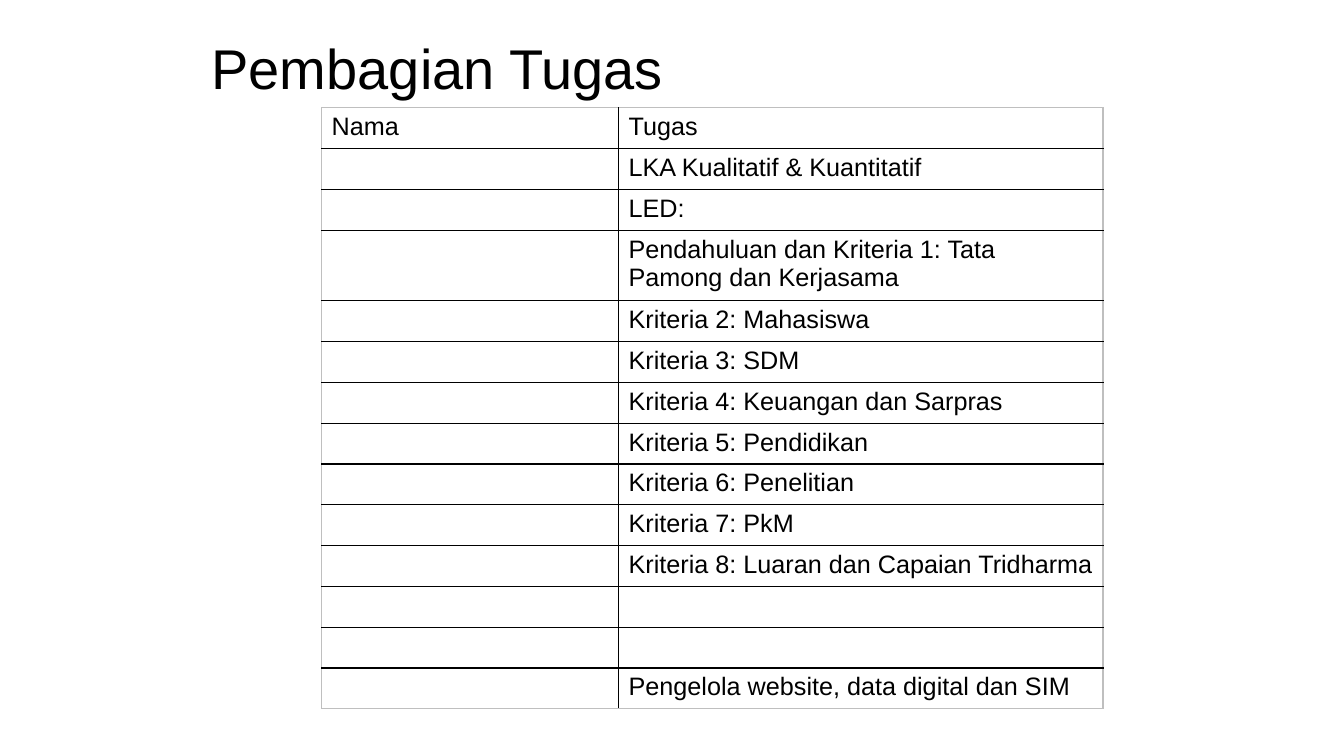
import pptx
import pptx.dml.color
import pptx.enum.text
import pptx.oxml.ns
import pptx.util
from lxml import etree

SLIDE_WIDTH, SLIDE_HEIGHT = 13.33, 7.5
INK, FRAME = "000000", "BFBFBF"
TITLE_FORMAT = {"name": "Arial", "size": pptx.util.Pt(40)}
CELL_FORMAT = {"name": "Arial", "size": pptx.util.Pt(18)}
HEADER = ("Nama", "Tugas")
DUTIES = [
    "LKA Kualitatif & Kuantitatif",
    "LED:",
    "Pendahuluan dan Kriteria 1: Tata Pamong dan Kerjasama",
    "Kriteria 2: Mahasiswa",
    "Kriteria 3: SDM",
    "Kriteria 4: Keuangan dan Sarpras",
    "Kriteria 5: Pendidikan",
    "Kriteria 6: Penelitian",
    "Kriteria 7: PkM",
    "Kriteria 8: Luaran dan Capaian Tridharma",
    "",
    "",
    "Pengelola website, data digital dan SIM",
]


def color(value):
    return pptx.dml.color.RGBColor.from_string(value)


def style_font(font, font_format):
    for attribute, value in font_format.items():
        setattr(font, attribute, value)
    font.color.rgb = color(INK)


def draw_borders(cell, edges):
    """Add 1 pt lines to a cell; edges maps a:ln tags to hex colours, in L, R, T, B order."""
    properties = cell._tc.get_or_add_tcPr()
    for position, (tag, value) in enumerate(edges.items()):
        line = etree.Element(pptx.oxml.ns.qn(f"a:{tag}"), w=str(pptx.util.Pt(1)))
        fill = etree.SubElement(line, pptx.oxml.ns.qn("a:solidFill"))
        etree.SubElement(fill, pptx.oxml.ns.qn("a:srgbClr"), val=value)
        properties.insert(position, line)


def add_title(slide, box, text):
    frame = slide.shapes.add_textbox(*map(pptx.util.Inches, box)).text_frame
    frame.word_wrap = True
    frame.vertical_anchor = pptx.enum.text.MSO_ANCHOR.MIDDLE
    heading = frame.paragraphs[0]
    heading.text = text
    heading.line_spacing = 0.9
    style_font(heading.runs[0].font, TITLE_FORMAT)


def add_duty_table(slide, box, rows, name_share):
    """Place the table in the box with equal rows; long duties wrap and grow their row."""
    left, top, width, height = map(pptx.util.Inches, box)
    table = slide.shapes.add_table(len(rows), len(HEADER), left, top, width, height).table
    table.first_row = table.horz_banding = False
    table.columns[0].width = int(width * name_share)
    table.columns[1].width = width - table.columns[0].width
    last_row, last_column = len(rows) - 1, len(HEADER) - 1
    for r, row in enumerate(rows):
        for c, text in enumerate(row):
            cell = table.cell(r, c)
            cell.fill.background()
            entry = cell.text_frame.paragraphs[0]
            entry.text = text
            style_font(entry.font, CELL_FORMAT)
            for run in entry.runs:
                style_font(run.font, CELL_FORMAT)
            draw_borders(cell, {
                "lnL": FRAME if c == 0 else INK,
                "lnR": FRAME if c == last_column else INK,
                "lnT": FRAME if r == 0 else INK,
                "lnB": FRAME if r == last_row else INK,
            })


def main():
    presentation = pptx.Presentation()
    presentation.slide_width = pptx.util.Inches(SLIDE_WIDTH)
    presentation.slide_height = pptx.util.Inches(SLIDE_HEIGHT)
    slide = presentation.slides.add_slide(presentation.slide_layouts[6])
    add_title(slide, (0.15 * SLIDE_WIDTH, 0.25, 10.78, 0.92), "Pembagian Tugas")
    rows = [HEADER] + [("", duty) for duty in DUTIES]
    add_duty_table(slide, (3.19, 1.07, 7.75, 5.67), rows, name_share=0.38)
    presentation.save("out.pptx")


if __name__ == "__main__":
    main()
